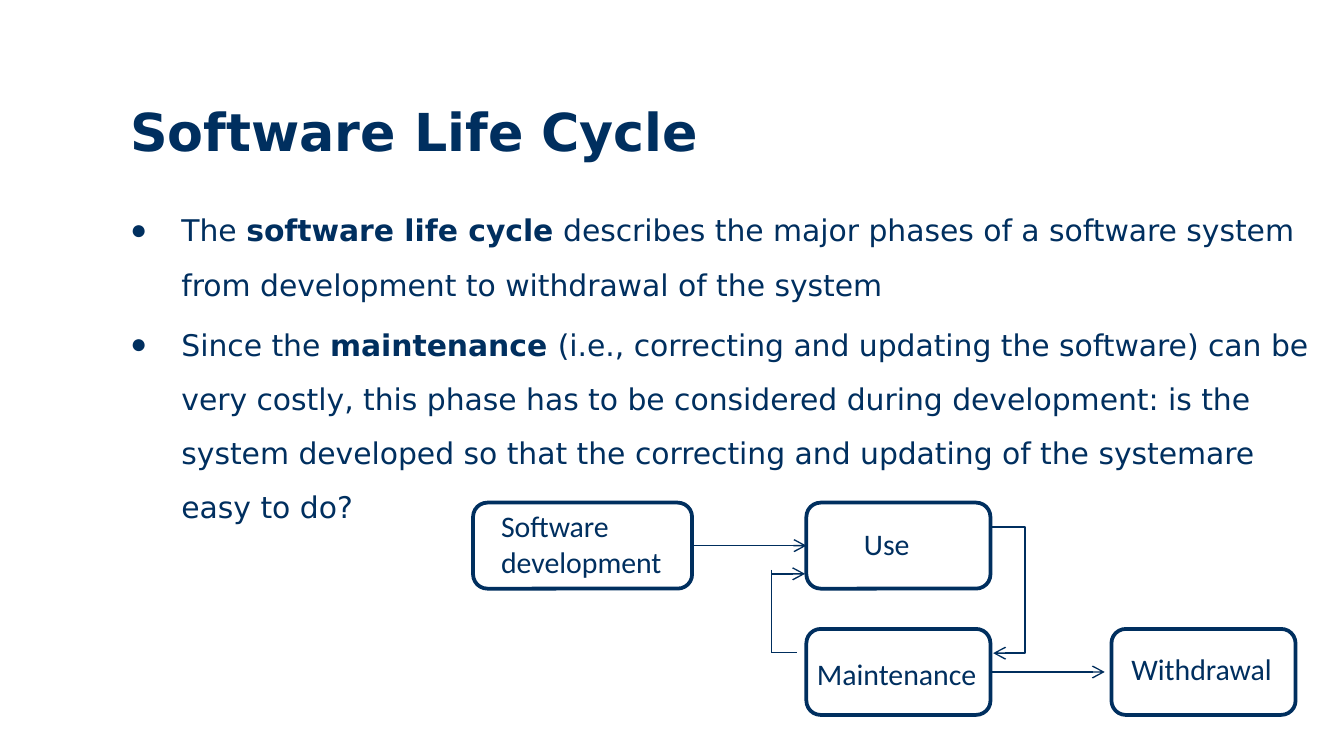
from lxml import etree
from pptx import Presentation
from pptx.dml.color import RGBColor
from pptx.enum.shapes import MSO_CONNECTOR, MSO_SHAPE
from pptx.enum.text import MSO_ANCHOR, MSO_AUTO_SIZE, PP_ALIGN
from pptx.oxml.ns import qn
from pptx.util import Inches, Pt

ROUND = MSO_SHAPE.ROUNDED_RECTANGLE
LINE, ELBOW = MSO_CONNECTOR.STRAIGHT, MSO_CONNECTOR.ELBOW
LEFT, TOP = PP_ALIGN.LEFT, MSO_ANCHOR.TOP
FIXED, GROW = MSO_AUTO_SIZE.NONE, MSO_AUTO_SIZE.SHAPE_TO_FIT_TEXT

WIDE = Inches(10)
HIGH = WIDE * 9 // 16
NAVY, INK, WHITE = "002F5F", "002E5D", "FFFFFF"
HEAD = {"name": "DejaVu Sans", "size": Pt(28), "bold": True}
BODY = {"name": "DejaVu Sans", "size": Pt(16), "bold": False}
LABEL = {"name": "Calibri", "size": Pt(16)}

ROW_A, ROW_B, TALL = 66.49, 83.2, 11.38
USE_X, USE_W, LOOP_X = 60, 13.7, 57.4
STEP = 3.2

POINTS = [
    [("The ", False), ("software life cycle", True),
     (" describes the major phases of a software system from development "
      "to withdrawal of the system", False)],
    [("Since the ", False), ("maintenance ", True),
     ("(i.e., correcting and updating the software) can be very costly, "
      "this phase has to be considered during development: is the system "
      "developed so that the correcting and updating of the systemare "
      "easy to do?", False)],
]
LABELS = [
    ("Software development", 36.3, 66.31, 14.2, TALL),
    ("Withdrawal", 83.2, 85.2, 23.9, 6.58),
    ("Maintenance", 59.8, 85.87, 23.9, 6.58),
    ("Use", 63.3, 68.68, 23.9, 6.58),
]


def col(n):
    return round(WIDE * n / 100)


def row(n):
    return round(HIGH * n / 100)


def area(x, y, w, h):
    return col(x), row(y), col(w), row(h)


def paint(target, color):
    target.rgb = RGBColor.from_string(color)


def style(font, look):
    for key, value in look.items():
        setattr(font, key, value)
    paint(font.color, NAVY)


def place(holder, *box):
    holder.left, holder.top, holder.width, holder.height = area(*box)
    frame = holder.text_frame
    frame.word_wrap = True
    frame.auto_size = FIXED
    frame.vertical_anchor = TOP
    return frame


def add_title(slide, text):
    frame = place(slide.shapes.title, 8.7, 12.27, 74.9, 11.56)
    par = frame.paragraphs[0]
    par.alignment = LEFT
    run = par.add_run()
    run.text = text
    style(run.font, HEAD)


def add_bullet(par):
    props = par._p.get_or_add_pPr()
    props.set("marL", str(Inches(0.38)))
    props.set("indent", str(-Inches(0.38)))
    etree.SubElement(props, qn("a:buSzPct"), val="93000")
    etree.SubElement(props, qn("a:buChar"), char="●")


def add_list(slide, points):
    frame = place(slide.placeholders[1], 8.7, 24.75, 90.2, 62.93)
    for i, parts in enumerate(points):
        par = frame.add_paragraph() if i else frame.paragraphs[0]
        add_bullet(par)
        par.alignment = LEFT
        par.line_spacing = Pt(29)
        par.space_before = Pt(3.2 if i else 0)
        for text, bold in parts:
            run = par.add_run()
            run.text = text
            style(run.font, {**BODY, "bold": bold})


def add_box(slide, x, y, w):
    box = slide.shapes.add_shape(ROUND, *area(x, y, w, TALL))
    box.shadow.inherit = False
    box.fill.solid()
    paint(box.fill.fore_color, WHITE)
    paint(box.line.color, NAVY)
    box.line.width = Pt(2)
    return box


def add_label(slide, text, *box):
    label = slide.shapes.add_textbox(*area(*box))
    frame = label.text_frame
    frame.word_wrap = True
    frame.auto_size = GROW
    run = frame.paragraphs[0].add_run()
    run.text = text
    style(run.font, LABEL)


def add_link(slide, start, end, arrow=True, kind=LINE, color=INK):
    link = slide.shapes.add_connector(
        kind, col(start[0]), row(start[1]), col(end[0]), row(end[1]))
    paint(link.line.color, color)
    link.line.width = Pt(0.75)
    if arrow:
        etree.SubElement(link.line._get_or_add_ln(), qn("a:tailEnd"), type="arrow")
    etree.SubElement(link._element.spPr, qn("a:effectLst"))
    return link


def bend(link, reach):
    geom = link._element.spPr.find(qn("a:prstGeom"))
    marks = geom.find(qn("a:avLst"))
    if marks is None:
        marks = etree.SubElement(geom, qn("a:avLst"))
    share = round(col(reach) / link.width * 100000)
    etree.SubElement(marks, qn("a:gd"), name="adj1", fmla=f"val {share}")


def add_flow(slide):
    build = add_box(slide, 35.2, ROW_A, 16.3)
    use = add_box(slide, USE_X, ROW_A, USE_W)
    care = add_box(slide, USE_X, ROW_B, USE_W)
    add_box(slide, 82.7, ROW_B, USE_W)

    mid_a, mid_b = ROW_A + TALL / 2, ROW_B + TALL / 2
    edge = USE_X + USE_W
    link = add_link(slide, (51.5, mid_a), (USE_X, mid_a))
    link.begin_connect(build, 3)
    link.end_connect(use, 1)
    link = add_link(slide, (edge, mid_b), (82.2, mid_b))
    link.begin_connect(care, 3)

    low = ROW_B + STEP
    down = add_link(slide, (edge + 0.1, ROW_A + STEP), (edge + 0.2, low),
                    kind=ELBOW, color=NAVY)
    bend(down, 2.5)
    add_link(slide, (LOOP_X, 75.38), (LOOP_X, low), arrow=False)
    add_link(slide, (LOOP_X, 75.91), (59.9, 75.91))
    add_link(slide, (LOOP_X, low - 0.1), (59.3, low - 0.1), arrow=False)

    for label in LABELS:
        add_label(slide, *label)


def main():
    deck = Presentation()
    deck.slide_width, deck.slide_height = WIDE, HIGH
    slide = deck.slides.add_slide(deck.slide_layouts[1])
    add_title(slide, "Software Life Cycle")
    add_list(slide, POINTS)
    add_flow(slide)
    deck.save("out.pptx")


if __name__ == "__main__":
    main()
